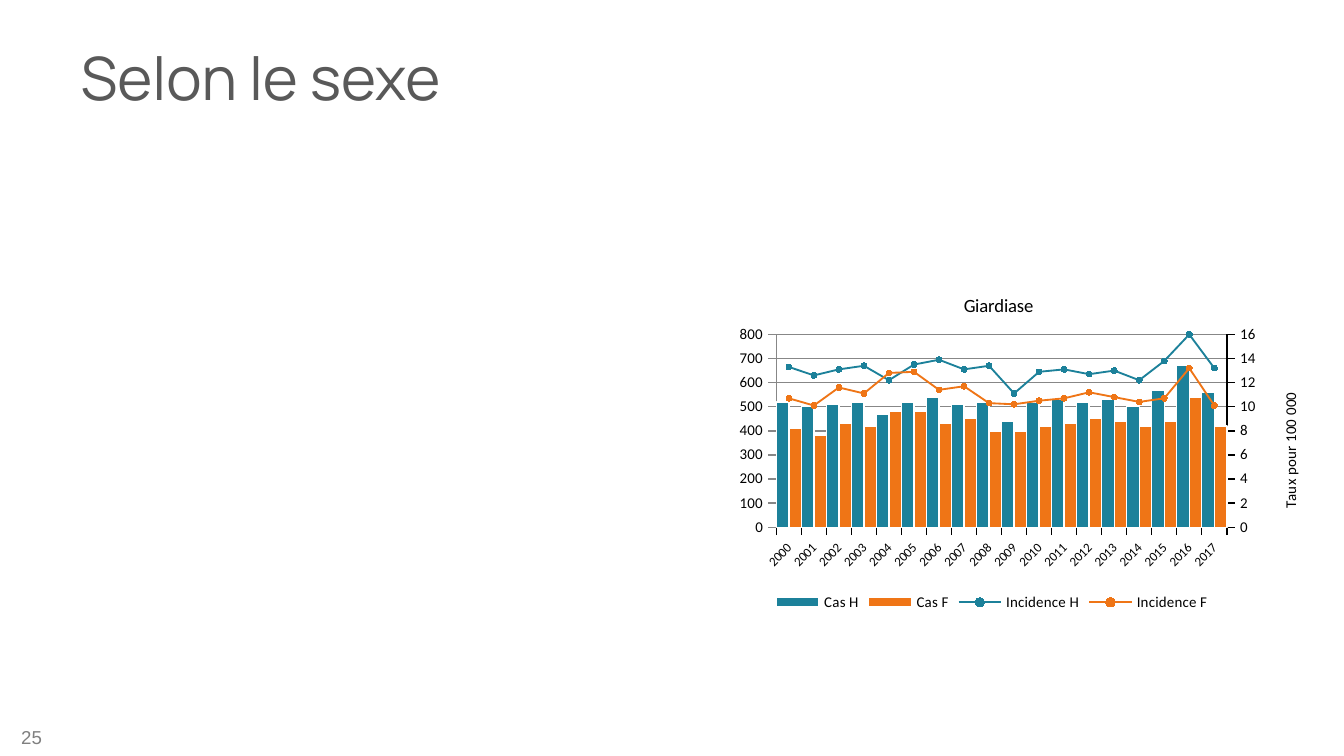
from pptx import Presentation
from pptx.chart.axis import ValueAxis
from pptx.chart.data import CategoryChartData
from pptx.dml.color import RGBColor
from pptx.enum.chart import XL_CHART_TYPE as ChartType, XL_LEGEND_POSITION as LegendPos
from pptx.enum.chart import XL_MARKER_STYLE as Marker, XL_TICK_MARK as Tick
from pptx.enum.text import MSO_ANCHOR as Anchor, PP_ALIGN as Align
from pptx.oxml import parse_xml
from pptx.oxml.ns import nsdecls, qn
from pptx.util import Pt

TEAL = RGBColor(0x1C, 0x81, 0x9A)
ORANGE = RGBColor(0xEF, 0x75, 0x16)
BLACK = RGBColor(0, 0, 0)
WHITE = RGBColor(0xFF, 0xFF, 0xFF)
TITLE_GREY = RGBColor(0x59, 0x59, 0x59)
NUMBER_GREY = RGBColor(0x80, 0x80, 0x80)

YEARS = [str(year) for year in range(2000, 2018)]
CASES = {
    "Cas H": [520, 500, 510, 520, 470, 520, 540, 510, 520,
              440, 520, 530, 520, 530, 500, 570, 670, 560],
    "Cas F": [410, 380, 430, 420, 480, 480, 430, 450, 400,
              400, 420, 430, 450, 440, 420, 440, 540, 420],
}
RATES = {
    "Incidence H": [13.3, 12.6, 13.1, 13.4, 12.2, 13.5, 13.9, 13.1, 13.4,
                    11.1, 12.9, 13.1, 12.7, 13, 12.2, 13.8, 16, 13.2],
    "Incidence F": [10.7, 10.1, 11.6, 11.1, 12.8, 12.9, 11.4, 11.7, 10.3,
                    10.2, 10.5, 10.7, 11.2, 10.8, 10.4, 10.7, 13.2, 10.1],
}
SEX_COLORS = (TEAL, ORANGE)

LINE_PLOT = """<c:lineChart %s><c:grouping val="standard"/><c:varyColors val="0"/>
<c:marker val="1"/><c:axId val="5001"/><c:axId val="5002"/></c:lineChart>""" % nsdecls("c")
HIDDEN_YEARS = """<c:catAx %s><c:axId val="5001"/>
<c:scaling><c:orientation val="minMax"/></c:scaling><c:delete val="1"/>
<c:axPos val="b"/><c:crossAx val="5002"/></c:catAx>""" % nsdecls("c")
RATE_AXIS = """<c:valAx %s><c:axId val="5002"/>
<c:scaling><c:orientation val="minMax"/></c:scaling><c:delete val="0"/>
<c:axPos val="r"/><c:numFmt formatCode="0" sourceLinked="0"/>
<c:majorTickMark val="out"/><c:minorTickMark val="none"/><c:tickLblPos val="nextTo"/>
<c:crossAx val="5001"/><c:crosses val="max"/></c:valAx>""" % nsdecls("c")


def set_font(font, name, size, color):
    font.name = name
    font.size = Pt(size)
    font.bold = False
    font.color.rgb = color


def set_layout(element, **fractions):
    """Place a chart part by fractions of the chart; w and h mean the inner plot."""
    for old in element.findall(qn("c:layout")):
        element.remove(old)
    target = '<c:layoutTarget val="inner"/>' if "w" in fractions else ""
    modes = "".join(f'<c:{key}Mode val="edge"/>' for key in "xy")
    values = "".join(f'<c:{key} val="{value}"/>' for key, value in fractions.items())
    layout = parse_xml(f'<c:layout {nsdecls("c")}><c:manualLayout>{target}{modes}{values}'
                       '</c:manualLayout></c:layout>')
    element.insert(0 if element.find(qn("c:tx")) is None else 1, layout)


def write_chart_title(title, text, size, x, y):
    paragraph = title.text_frame.paragraphs[0]
    paragraph.text = text
    set_font(paragraph.font, "Calibri", size, BLACK)
    set_layout(title._element, x=x, y=y)


def style_axis(axis, size=8):
    axis.has_major_gridlines = False
    axis.major_tick_mark = Tick.OUTSIDE
    axis.format.line.color.rgb = BLACK
    axis.format.line.width = Pt(0.75)
    set_font(axis.tick_labels.font, "Calibri", size, BLACK)


def style_value_axis(axis, title, maximum, step, x, y):
    style_axis(axis)
    axis.minimum_scale = 0
    axis.maximum_scale = maximum
    axis.major_unit = step
    write_chart_title(axis.axis_title, title, 8, x, y)
    body = axis.axis_title.text_frame._txBody.find(qn("a:bodyPr"))
    body.set("rot", "-5400000")
    body.set("vert", "horz")


def move_rates_to_right_axis(chart):
    """Turn the last two series into lines on a second axis, and return that axis."""
    columns = chart.plots[0]._element
    lines = parse_xml(LINE_PLOT)
    line_markers = lines.find(qn("c:marker"))
    for series in columns.findall(qn("c:ser"))[len(CASES):]:
        for column_setting in series.findall(qn("c:invertIfNegative")):
            series.remove(column_setting)
        line_markers.addprevious(series)
    columns.addnext(lines)
    rate_axis = parse_xml(RATE_AXIS)
    left_axis = chart.value_axis._element
    left_axis.addnext(rate_axis)
    left_axis.addnext(parse_xml(HIDDEN_YEARS))
    return ValueAxis(rate_axis)


def style_series(chart):
    columns, lines = chart.plots
    columns.gap_width = 0
    columns.overlap = 0
    columns.vary_by_categories = False
    for cases, rates, color in zip(columns.series, lines.series, SEX_COLORS):
        cases.format.fill.solid()
        cases.format.fill.fore_color.rgb = color
        cases.format.line.color.rgb = WHITE
        cases.format.line.width = Pt(0.75)
        rates.smooth = False
        rates.format.line.color.rgb = color
        rates.format.line.width = Pt(1)
        rates.marker.style = Marker.CIRCLE
        rates.marker.size = 3
        rates.marker.format.fill.solid()
        rates.marker.format.fill.fore_color.rgb = color
        rates.marker.format.line.fill.background()


def add_giardiasis_chart(slide):
    data = CategoryChartData()
    data.categories = YEARS
    for name, values in (CASES | RATES).items():
        data.add_series(name, values)
    chart = slide.shapes.add_chart(ChartType.COLUMN_CLUSTERED, Pt(361.5), Pt(146),
                                   Pt(340), Pt(184.5), data).chart
    set_font(chart.font, "Calibri", 8, BLACK)
    chart._chartSpace.find(qn("c:chart")).addnext(parse_xml(
        f'<c:spPr {nsdecls("c", "a")}><a:solidFill><a:srgbClr val="{WHITE}"/></a:solidFill>'
        '<a:ln><a:noFill/></a:ln></c:spPr>'))

    rate_axis = move_rates_to_right_axis(chart)
    style_series(chart)
    style_axis(chart.category_axis, 7)
    year_labels = chart.category_axis._element.find(qn("c:txPr"))
    year_labels.find(qn("a:bodyPr")).set("rot", "-2700000")
    style_value_axis(chart.value_axis, "Nombre de cas", 900, 100, 0.05, 0.37)
    style_value_axis(rate_axis, "Taux pour 100 000", 16, 2, 0.95, 0.34)

    write_chart_title(chart.chart_title, "Giardiase", 10, 0.45, 0.05)
    set_layout(chart._chartSpace.chart.plotArea, x=0.16, y=0.18, w=0.71, h=0.56)
    chart.has_legend = True
    chart.legend.position = LegendPos.BOTTOM
    chart.legend.include_in_layout = False
    set_font(chart.legend.font, "Calibri", 8, BLACK)


def write_title(slide, text):
    title = slide.shapes.title
    title.left, title.top, title.width, title.height = Pt(36), Pt(7), Pt(648), Pt(68)
    title.text_frame.vertical_anchor = Anchor.MIDDLE
    paragraph = title.text_frame.paragraphs[0]
    paragraph.text = text
    paragraph.alignment = Align.LEFT
    set_font(paragraph.font, "Manrope", 32, TITLE_GREY)


def add_page_number(slide, number):
    frame = slide.shapes.add_textbox(Pt(-5), Pt(384), Pt(34.5), Pt(21.5)).text_frame
    frame.word_wrap = True
    frame.vertical_anchor = Anchor.MIDDLE
    paragraph = frame.paragraphs[0]
    paragraph.text = str(number)
    paragraph.alignment = Align.RIGHT
    set_font(paragraph.font, "Arial", 10, NUMBER_GREY)


def main():
    deck = Presentation()
    deck.slide_width, deck.slide_height = Pt(720), Pt(405)
    slide = deck.slides.add_slide(deck.slide_layouts[5])
    write_title(slide, "Selon le sexe")
    add_page_number(slide, 25)
    add_giardiasis_chart(slide)
    deck.save("out.pptx")


if __name__ == "__main__":
    main()
